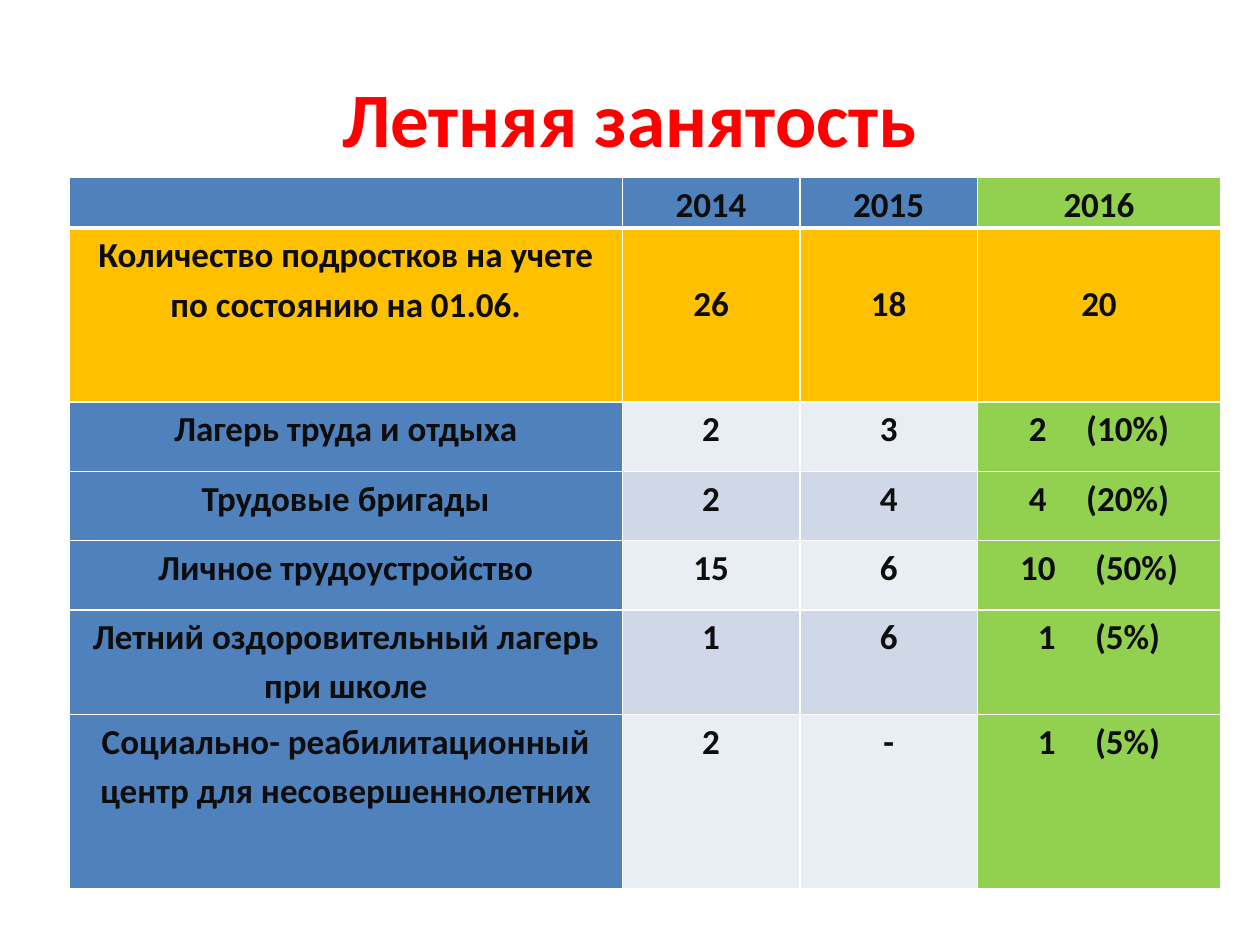
from dataclasses import dataclass

from lxml.etree import SubElement
from pptx import Presentation
from pptx.dml.color import RGBColor as Color
from pptx.enum.text import MSO_ANCHOR as Anchor, PP_ALIGN as Align
from pptx.oxml.ns import qn
from pptx.util import Pt


@dataclass(frozen=True)
class Theme:
    font: str = "Calibri"
    title_size: int = 44
    cell_size: int = 20
    line_spacing: float = 1.15
    share_gap: int = 18
    title: str = "FF0000"
    ink: str = "0D0D0D"
    label: str = "4F81BD"
    total: str = "FFC000"
    current: str = "92D050"
    bands: tuple = ("E9EDF4", "D0D8E8")
    border: str = "FFFFFF"


THEME = Theme()
YEARS = ["", "2014", "2015", "2016"]
TOTALS = ["Количество подростков на учете по состоянию на 01.06.", "26", "18", "20"]
ACTIVITIES = [
    ["Лагерь труда и отдыха", "2", "3", ("2", "(10%)")],
    ["Трудовые бригады", "2", "4", ("4", "(20%)")],
    ["Личное трудоустройство", "15", "6", ("10", "(50%)")],
    ["Летний оздоровительный лагерь при школе", "1", "6", ("1", "(5%)")],
    ["Социально- реабилитационный центр для несовершеннолетних",
     "2", "-", ("1", "(5%)")],
]
COLUMN_WIDTHS = [316, 101.5, 101.5, 139]
ROW_HEIGHTS = [28.8, 99.4, 39.6, 39.6, 39.6, 59.8, 99.4]


def format_paragraph(para, size, color):
    para.alignment = Align.CENTER
    font = para.font
    font.name, font.size, font.bold = THEME.font, Pt(size), True
    font.color.rgb = Color.from_string(color)


def set_borders(cell, bottom):
    props = cell._tc.get_or_add_tcPr()
    for side, width in (("L", 1), ("R", 1), ("T", 1), ("B", bottom)):
        line = SubElement(props, qn(f"a:ln{side}"), w=str(Pt(width)))
        fill = SubElement(line, qn("a:solidFill"))
        SubElement(fill, qn("a:srgbClr"), val=THEME.border)


def cell_color(row, column):
    if row == 1:
        return THEME.total
    if column == 3:
        return THEME.current
    if row == 0 or column == 0:
        return THEME.label
    return THEME.bands[row % 2]


def write_cell(cell, content):
    para = cell.text_frame.paragraphs[0]
    format_paragraph(para, THEME.cell_size, THEME.ink)
    para.line_spacing = THEME.line_spacing
    if isinstance(content, tuple):
        # Count and share, set apart by one widened space
        count, share = content
        para.add_run().text = count
        gap = para.add_run()
        gap.text = " "
        gap.font._element.set("spc", str(THEME.share_gap * 100))
        para.add_run().text = share
    elif content:
        para.add_run().text = content


def place_title(page, left, top, width, height):
    title = page.shapes.title
    title.left, title.top = Pt(left), Pt(top)
    title.width, title.height = Pt(width), Pt(height)
    frame = title.text_frame
    frame.text = "Летняя занятость"
    frame.vertical_anchor = Anchor.MIDDLE
    format_paragraph(frame.paragraphs[0], THEME.title_size, THEME.title)


def place_table(page, left, top, width, height):
    rows = [YEARS, TOTALS, *ACTIVITIES]
    table = page.shapes.add_table(
        len(rows), len(YEARS), Pt(left), Pt(top), Pt(width), Pt(height)).table
    for column, share in zip(table.columns, COLUMN_WIDTHS):
        column.width = Pt(width * share / sum(COLUMN_WIDTHS))
    for row, share in zip(table.rows, ROW_HEIGHTS):
        row.height = Pt(height * share / sum(ROW_HEIGHTS))

    for r, contents in enumerate(rows):
        for c, content in enumerate(contents):
            cell = table.cell(r, c)
            cell.margin_left = cell.margin_right = Pt(5)
            cell.margin_bottom = 0
            # The totals sit level with the second line of their label
            cell.margin_top = Pt(28 if r == 1 and c > 0 else 0)
            set_borders(cell, bottom=3 if r == 0 else 1)
            cell.fill.solid()
            cell.fill.fore_color.rgb = Color.from_string(cell_color(r, c))
            write_cell(cell, content)


def main():
    deck = Presentation()
    deck.slide_width, deck.slide_height = Pt(720), Pt(540)
    page = deck.slides.add_slide(deck.slide_layouts[5])
    place_title(page, 36, 21.6, 648, 90)
    place_table(page, 39.6, 101.5, sum(COLUMN_WIDTHS), sum(ROW_HEIGHTS))
    deck.save("out.pptx")


if __name__ == "__main__":
    main()
